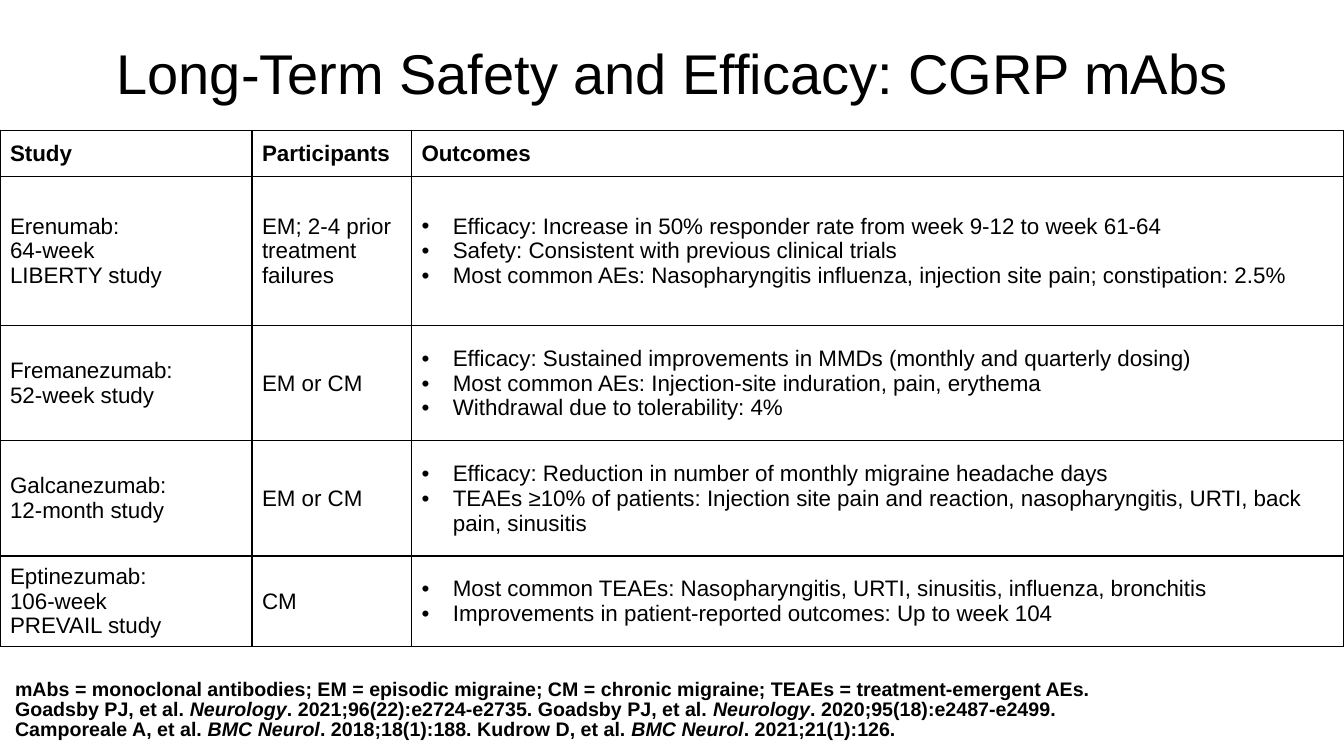
from lxml.etree import SubElement
from pptx import Presentation
from pptx.dml.color import RGBColor
from pptx.enum.text import MSO_ANCHOR, PP_ALIGN
from pptx.oxml.ns import qn
from pptx.util import Cm, Pt

COLORS = {"ink": "000000"}
FONT = "Arial"
TITLE = "Long-Term Safety and Efficacy: CGRP mAbs"
HEADINGS = ["Study", "Participants", "Outcomes"]
# Each study: name lines, participants, outcome bullets
STUDIES = [
    (["Erenumab:", "64-week", "LIBERTY study"], "EM; 2-4 prior treatment failures", [
        "Efficacy: Increase in 50% responder rate from week 9-12 to week 61-64",
        "Safety: Consistent with previous clinical trials",
        "Most common AEs: Nasopharyngitis influenza, injection site pain; constipation: 2.5%",
    ]),
    (["Fremanezumab:", "52-week study"], "EM or CM", [
        "Efficacy: Sustained improvements in MMDs (monthly and quarterly dosing)",
        "Most common AEs: Injection-site induration, pain, erythema",
        "Withdrawal due to tolerability: 4%",
    ]),
    (["Galcanezumab:", "12-month study"], "EM or CM", [
        "Efficacy: Reduction in number of monthly migraine headache days",
        "TEAEs ≥10% of patients: Injection site pain and reaction, nasopharyngitis, URTI, "
        "back pain, sinusitis",
    ]),
    (["Eptinezumab:", "106-week", "PREVAIL study"], "CM", [
        "Most common TEAEs: Nasopharyngitis, URTI, sinusitis, influenza, bronchitis",
        "Improvements in patient-reported outcomes: Up to week 104",
    ]),
]
ABBREVIATIONS = ("mAbs = monoclonal antibodies; EM = episodic migraine; "
                 "CM = chronic migraine; TEAEs = treatment-emergent AEs.")
# Journal names (every second part) are italic
REFERENCES = [
    "Goadsby PJ, et al. ", "Neurology",
    ". 2021;96(22):e2724-e2735. Goadsby PJ, et al. ", "Neurology",
    ". 2020;95(18):e2487-e2499. Camporeale A, et al. ", "BMC Neurol",
    ". 2018;18(1):188. Kudrow D, et al. ", "BMC Neurol",
    ". 2021;21(1):126.",
]
PAGE_WIDTH, PAGE_HEIGHT = 33.87, 19.05
COLUMN_WIDTHS = [6.35, 4.02, 23.5]
ROW_HEIGHTS = [1.17, 3.76, 2.9, 2.9, 2.03]


def add_span(para, text, size, bold=False, italic=False):
    span = para.add_run()
    span.text = text
    font = span.font
    font.name, font.size, font.bold, font.italic = FONT, Pt(size), bold, italic
    font.color.rgb = RGBColor.from_string(COLORS["ink"])


def add_box(page, left, top, width, height, anchor, inset):
    """Add a wrapping text box and return its text frame."""
    frame = page.shapes.add_textbox(Cm(left), Cm(top), Cm(width), Cm(height)).text_frame
    frame.word_wrap = True
    frame.vertical_anchor = anchor
    frame.margin_left = frame.margin_right = Cm(inset)
    frame.margin_top = frame.margin_bottom = Cm(inset)
    return frame


def add_bullet(para):
    properties = para._p.get_or_add_pPr()
    properties.set("marL", str(Cm(0.79)))
    properties.set("indent", str(-Cm(0.79)))
    SubElement(properties, qn("a:buFont")).set("typeface", FONT)
    SubElement(properties, qn("a:buChar")).set("char", "•")


def style_cell(cell):
    """Centre vertically, clear the fill and draw all four borders."""
    cell.vertical_anchor = MSO_ANCHOR.MIDDLE
    properties = cell._tc.get_or_add_tcPr()
    for side in ("lnL", "lnR", "lnT", "lnB"):
        border = SubElement(properties, qn(f"a:{side}"), w=str(Pt(1)))
        fill = SubElement(border, qn("a:solidFill"))
        SubElement(fill, qn("a:srgbClr")).set("val", COLORS["ink"])
    cell.fill.background()


def fill_cell(cell, lines, bold=False, bulleted=False):
    """Write lines as bullets, or as one paragraph with line breaks."""
    style_cell(cell)
    para = cell.text_frame.paragraphs[0]
    for index, line in enumerate(lines):
        if index and bulleted:
            para = cell.text_frame.add_paragraph()
        elif index:
            para.add_line_break()
        if bulleted:
            add_bullet(para)
        add_span(para, line, 16, bold)


def add_title(page):
    para = add_box(page, 0, 0.43, PAGE_WIDTH, 2.97, MSO_ANCHOR.MIDDLE, 0.13).paragraphs[0]
    para.alignment = PP_ALIGN.CENTER
    para.line_spacing = 0.9
    add_span(para, TITLE, 40)


def add_study_table(page):
    table = page.shapes.add_table(
        len(ROW_HEIGHTS), len(COLUMN_WIDTHS), Cm(0), Cm(3.28),
        Cm(sum(COLUMN_WIDTHS)), Cm(sum(ROW_HEIGHTS))).table
    table.horz_banding = False
    for column, width in zip(table.columns, COLUMN_WIDTHS):
        column.width = Cm(width)
    for row, height in zip(table.rows, ROW_HEIGHTS):
        row.height = Cm(height)
    for column, heading in enumerate(HEADINGS):
        fill_cell(table.cell(0, column), [heading], bold=True)
    for row, (study, participants, outcomes) in enumerate(STUDIES, start=1):
        fill_cell(table.cell(row, 0), study)
        fill_cell(table.cell(row, 1), [participants])
        fill_cell(table.cell(row, 2), outcomes, bulleted=True)


def add_references(page):
    height = 2.18
    frame = add_box(page, 0, PAGE_HEIGHT - height, 29, height, MSO_ANCHOR.BOTTOM, 0.38)
    para = frame.paragraphs[0]
    para.line_spacing = 0.85
    add_span(para, ABBREVIATIONS, 14, bold=True)
    para.add_line_break()
    for index, part in enumerate(REFERENCES):
        add_span(para, part, 14, bold=True, italic=index % 2 == 1)


def main():
    deck = Presentation()
    deck.slide_width, deck.slide_height = Cm(PAGE_WIDTH), Cm(PAGE_HEIGHT)
    page = deck.slides.add_slide(deck.slide_layouts[6])
    add_title(page)
    add_references(page)
    add_study_table(page)
    deck.save("out.pptx")


if __name__ == "__main__":
    main()
